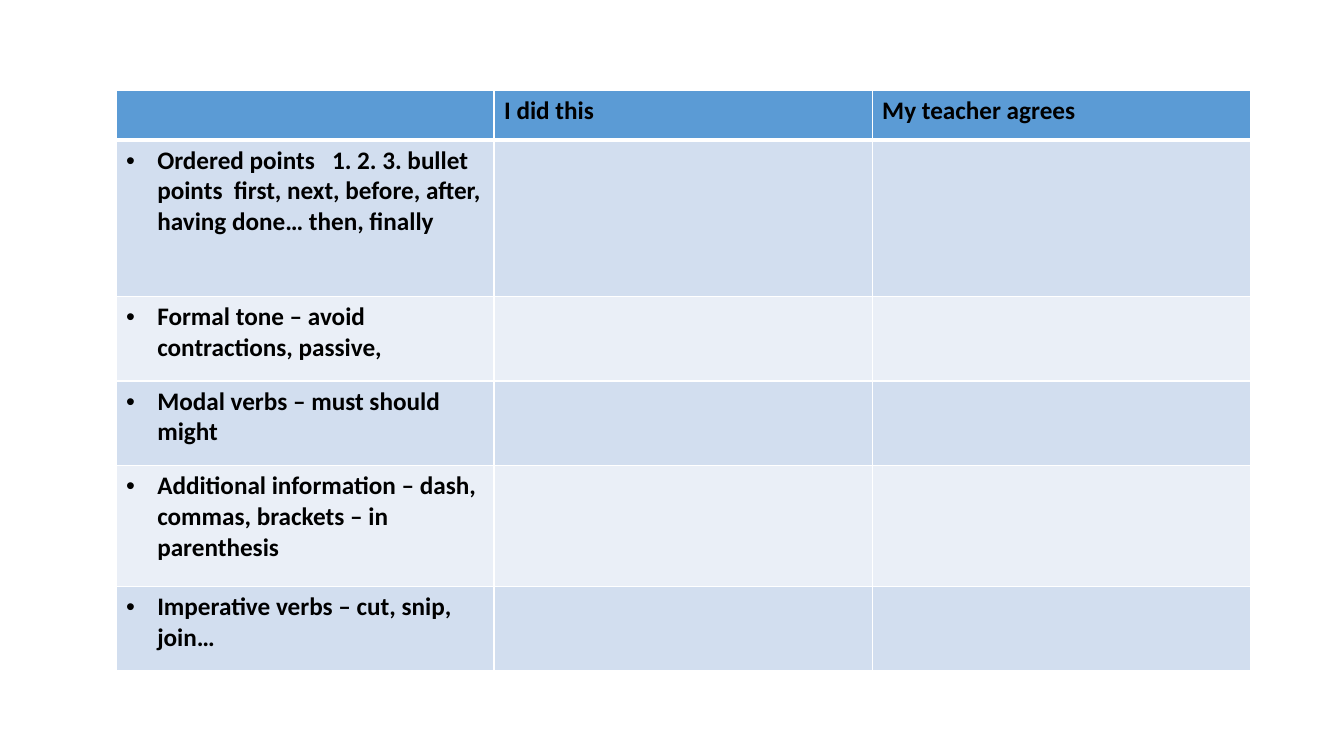
from pptx import Presentation
from pptx.dml.color import RGBColor
from pptx.oxml import parse_xml
from pptx.oxml.ns import nsdecls
from pptx.util import Inches, Pt

COLORS = {
    "header": "5B9BD5",
    "odd_row": "D2DEEF",
    "even_row": "EAEFF7",
    "border": "FFFFFF",
    "text": "000000",
}
HEADINGS = ["", "I did this", "My teacher agrees"]
CRITERIA = [
    "Ordered points   1. 2. 3. bullet points  first, next, before, after, having done… then, finally",
    "Formal tone – avoid contractions, passive,",
    "Modal verbs – must should might",
    "Additional information – dash, commas, brackets – in parenthesis",
    "Imperative verbs – cut, snip, join…",
]
ROW_HEIGHTS = [0.49, 1.55, 0.84, 0.84, 1.2, 0.83]
COLUMN_WIDTH = 3.75


def add_border(cell, side, points):
    cell._tc.get_or_add_tcPr().append(parse_xml(
        f'<a:{side} {nsdecls("a")} w="{Pt(points)}"><a:solidFill>'
        f'<a:srgbClr val="{COLORS["border"]}"/></a:solidFill></a:{side}>'))


def add_bullet(para):
    properties = para._p.get_or_add_pPr()
    properties.set("marL", str(Inches(0.31)))
    properties.set("indent", str(Inches(-0.31)))
    properties.append(parse_xml(f'<a:buFont {nsdecls("a")} typeface="Arial"/>'))
    properties.append(parse_xml(f'<a:buChar {nsdecls("a")} char="•"/>'))


deck = Presentation()
deck.slide_width, deck.slide_height = Inches(13.33), Inches(7.5)
page = deck.slides.add_slide(deck.slide_layouts[6])

# Checklist grid
rows = [HEADINGS] + [[criterion, "", ""] for criterion in CRITERIA]
checklist = page.shapes.add_table(
    len(rows), len(HEADINGS), Inches(1.15), Inches(0.9),
    Inches(COLUMN_WIDTH * len(HEADINGS)), Inches(sum(ROW_HEIGHTS))).table
for column in checklist.columns:
    column.width = Inches(COLUMN_WIDTH)
for row, height in zip(checklist.rows, ROW_HEIGHTS):
    row.height = Inches(height)

# Cell borders, fills and text
for row_index, texts in enumerate(rows):
    if row_index == 0:
        fill_name = "header"
    else:
        fill_name = "odd_row" if row_index % 2 else "even_row"
    for column_index, text in enumerate(texts):
        cell = checklist.cell(row_index, column_index)
        add_border(cell, "lnL", 1)
        add_border(cell, "lnR", 1)
        add_border(cell, "lnT", 3 if row_index == 1 else 1)
        add_border(cell, "lnB", 3 if row_index == 0 else 1)
        cell.fill.solid()
        cell.fill.fore_color.rgb = RGBColor.from_string(COLORS[fill_name])
        if not text:
            continue
        cell.text_frame.text = text
        para = cell.text_frame.paragraphs[0]
        if row_index > 0:
            add_bullet(para)
        font = para.runs[0].font
        font.name, font.size, font.bold = "Calibri", Pt(18), True
        font.color.rgb = RGBColor.from_string(COLORS["text"])

deck.save("out.pptx")
